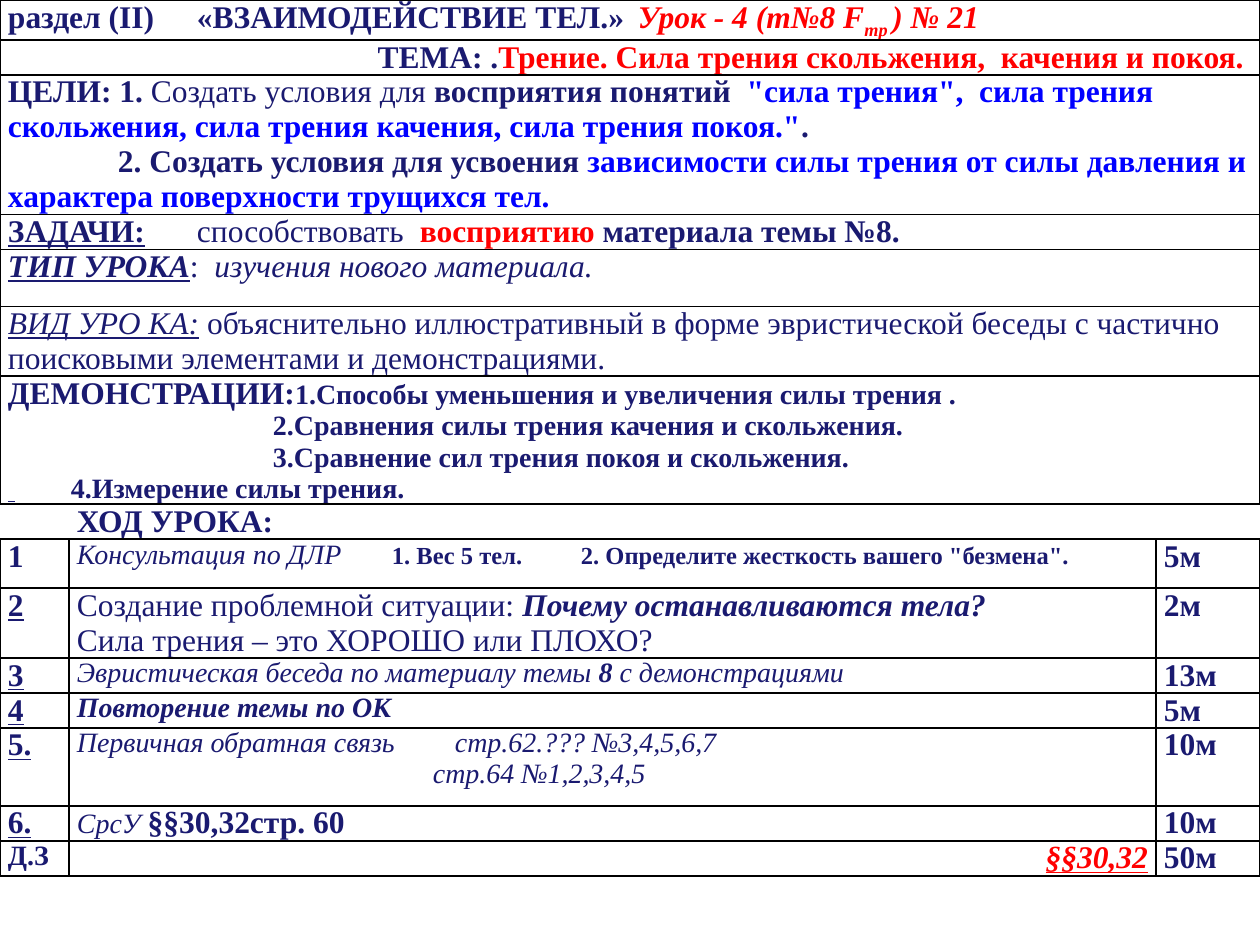
from dataclasses import dataclass
from typing import Optional

import lxml.etree
import pptx
import pptx.dml.color
import pptx.enum.text
import pptx.oxml.ns
import pptx.util

EMU_PER_PX = 914400 // 126
FONT = "Times New Roman"
NAVY = pptx.dml.color.RGBColor(0x1A, 0x1A, 0x70)
RED = pptx.dml.color.RGBColor(0xFF, 0x00, 0x00)
BLUE = pptx.dml.color.RGBColor(0x00, 0x00, 0xFF)
BLACK = pptx.dml.color.RGBColor(0x00, 0x00, 0x00)
THIN, THICK = 1, 1.5


@dataclass
class Span:
    text: str
    style: str = "b"  # any of b, i, u
    size: int = 18
    color: pptx.dml.color.RGBColor = NAVY
    subscript: bool = False


@dataclass
class Para:
    spans: list[Span]
    right: bool = False
    margin: int = 0
    indent: int = 0
    tabs: tuple[int, ...] = ()


@dataclass
class Edges:
    left: Optional[float] = THIN
    right: Optional[float] = THIN
    top: Optional[float] = THIN
    bottom: Optional[float] = THIN


@dataclass
class Row:
    height: int
    cells: list[list[Para]]  # one cell spans the whole row
    bottom: float = THIN
    left: Optional[float] = THIN
    right: Optional[float] = THIN
    inner: Optional[float] = THICK


def px(length: int) -> int:
    return length * EMU_PER_PX


def line(*spans: Span, **layout) -> list[Para]:
    return [Para(list(spans), **layout)]


def step(height: int, number: Span, content: list[Para], minutes: str,
         bottom: float = THIN, **edges) -> Row:
    edges = {"left": THICK, **edges}
    return Row(height, [line(number), content, line(Span(minutes))], bottom, **edges)


def write_para(para, source: Para) -> None:
    for span in source.spans:
        run = para.add_run()
        run.text = span.text
        font = run.font
        font.name, font.size = FONT, pptx.util.Pt(span.size)
        font.bold, font.italic = "b" in span.style, "i" in span.style
        font.underline = "u" in span.style
        font.color.rgb = span.color
        if span.subscript:
            run._r.get_or_add_rPr().set("baseline", "-25000")
    if source.right:
        para.alignment = pptx.enum.text.PP_ALIGN.RIGHT
    properties = para._p.get_or_add_pPr()
    properties.set("marL", str(px(source.margin)))
    properties.set("indent", str(px(source.indent)))
    if source.tabs:
        stops = lxml.etree.SubElement(properties, pptx.oxml.ns.qn("a:tabLst"))
        for stop in source.tabs:
            lxml.etree.SubElement(stops, pptx.oxml.ns.qn("a:tab"), pos=str(px(stop)), algn="l")
    if not source.spans:
        end = lxml.etree.SubElement(para._p, pptx.oxml.ns.qn("a:endParaRPr"), sz="1200")
        lxml.etree.SubElement(end, pptx.oxml.ns.qn("a:latin"), typeface=FONT)


def draw_edges(cell, edges: Edges) -> None:
    properties = cell._tc.get_or_add_tcPr()
    widths = {"L": edges.left, "R": edges.right, "T": edges.top, "B": edges.bottom}
    for side, width in widths.items():
        border = lxml.etree.SubElement(properties, pptx.oxml.ns.qn("a:ln" + side))
        if width is None:
            border.set("w", "0")
            lxml.etree.SubElement(border, pptx.oxml.ns.qn("a:noFill"))
        else:
            border.set("w", str(pptx.util.Pt(width)))
            fill = lxml.etree.SubElement(border, pptx.oxml.ns.qn("a:solidFill"))
            lxml.etree.SubElement(fill, pptx.oxml.ns.qn("a:srgbClr"), val=str(BLACK))


def fill_cell(cell, paras: list[Para], edges: Edges) -> None:
    cell.margin_left = cell.margin_right = px(8)
    cell.margin_top = cell.margin_bottom = 0
    draw_edges(cell, edges)
    cell.fill.background()
    frame = cell.text_frame
    for index, source in enumerate(paras):
        write_para(frame.add_paragraph() if index else frame.paragraphs[0], source)


def draw_table(page, columns: list[int], rows: list[Row], height: int) -> None:
    frame = page.shapes.add_table(len(rows), len(columns), 0, 0, px(sum(columns)), px(height))
    table = frame.table
    table.first_row = table.horz_banding = False
    for column, width in zip(table.columns, columns):
        column.width = px(width)
    top = THIN
    for index, row in enumerate(rows):
        table.rows[index].height = px(row.height)
        cells = [table.cell(index, number) for number in range(len(columns))]
        if len(row.cells) == 1:
            cells[0].merge(cells[-1])
            contents = [row.cells[0], [], []]
            sides = [(row.left, row.right), (None, None), (None, row.right)]
        else:
            contents = row.cells
            middle = THIN if row.inner is not None else None
            sides = [(row.left, row.inner), (row.inner, middle), (middle, row.right)]
        for cell, paras, (left, right) in zip(cells, contents, sides):
            fill_cell(cell, paras, Edges(left, right, top, row.bottom))
        top = row.bottom
    frame.height = px(height)


# Lesson plan header: one full-width cell per row
HEADER = [
    Row(29, [line(Span("раздел (II)\t«ВЗАИМОДЕЙСТВИЕ ТЕЛ.»\t"),
                  Span("Урок - 4 (т№8 F", "bi", color=RED),
                  Span("тр ", "bi", color=RED, subscript=True),
                  Span(") № 21", "bi", color=RED), tabs=(186, 850))], THICK),
    Row(29, [line(Span("ТЕМА: ."),
                  Span("Трение. Сила трения скольжения,  качения и покоя. ", color=RED),
                  right=True)], THICK, THICK, THICK),
    Row(113, [line(Span("ЦЕЛИ: 1. "), Span("Создать условия для ", ""),
                   Span("восприятия понятий  "),
                   Span('"сила трения",  сила трения скольжения, сила трения качения, '
                        'сила трения покоя."', color=BLUE), Span("."))
              + line(Span("2. Создать условия для усвоения "),
                     Span("зависимости силы трения от силы давления и характера "
                          "поверхности трущихся тел.", color=BLUE), indent=110)]),
    Row(29, [line(Span("ЗАДАЧИ:", "bu"), Span("\t"), Span("способствовать  ", ""),
                  Span("восприятию", color=RED), Span(" материала темы №8."), tabs=(161,))]),
    Row(57, [line(Span("ТИП УРОКА", "biu"), Span(":  ", ""),
                  Span("изучения нового материала.", "i"))]),
    Row(57, [line(Span("ВИД УРО КА:", "iu"),
                  Span(" объяснительно иллюстративный в форме эвристической беседы "
                       "с частично поисковыми элементами и демонстрациями.", ""))], THICK),
    Row(113, [line(Span("ДЕМОНСТРАЦИИ:"),
                   Span("1.Способы уменьшения и увеличения силы трения .", size=16))
              + line(Span("2.Сравнения силы трения качения и скольжения.", size=16), margin=265)
              + line(Span("3.Сравнение сил трения покоя и скольжения.", size=16), margin=265)
              + line(Span(" ", "biu", 16), Span("\t4.Измерение силы трения.", size=16),
                     tabs=(265,))], THICK, THICK, THICK),
    Row(29, [line(), line(Span("ХОД УРОКА:")), line()], THICK, None, None, None),
]

# Lesson steps: number, content, minutes
STEPS = [
    step(49, Span("1"),
         line(Span("Консультация по ДЛР\t", "i", 16),
              Span('1. Вес 5 тел.\t2. Определите жесткость вашего "безмена".', size=14),
              tabs=(285, 477)), "5м"),
    step(57, Span("2", "bu"),
         line(Span("Создание проблемной ситуации: ", ""),
              Span("Почему останавливаются тела?", "bi"))
         + line(Span("Сила трения – это ХОРОШО или ПЛОХО?", "")), "2м"),
    step(29, Span("3", "bu"),
         line(Span("Эвристическая беседа по материалу темы", "i", 16), Span(" 8", "bi", 16),
              Span(" с демонстрациями", "i", 16)), "13м"),
    step(29, Span("4", "bu"), line(Span("Повторение темы по ОК", "bi", 16)), "5м"),
    step(78, Span("5.", "bu"),
         line(Span("Первичная обратная связь\tстр.62.??? №3,4,5,6,7", "i", 16), tabs=(352,))
         + line(Span("стр.64 №1,2,3,4,5", "i", 16), margin=356), "10м"),
    step(29, Span("6.", "bu"),
         line(Span("СрсУ ", "i", 16), Span("§§30,32стр. 60")), "10м", THICK),
    step(29, Span("Д.З", size=16),
         line(Span("§§30,32", "biu", color=RED), right=True), "50м", THICK,
         right=THICK, inner=THIN),
]


def main() -> None:
    deck = pptx.Presentation()
    deck.slide_width, deck.slide_height = px(1260), px(945)
    page = deck.slides.add_slide(deck.slide_layouts[6])
    draw_table(page, [69, 1087, 104], HEADER + STEPS, 927)
    deck.save("out.pptx")


if __name__ == "__main__":
    main()
